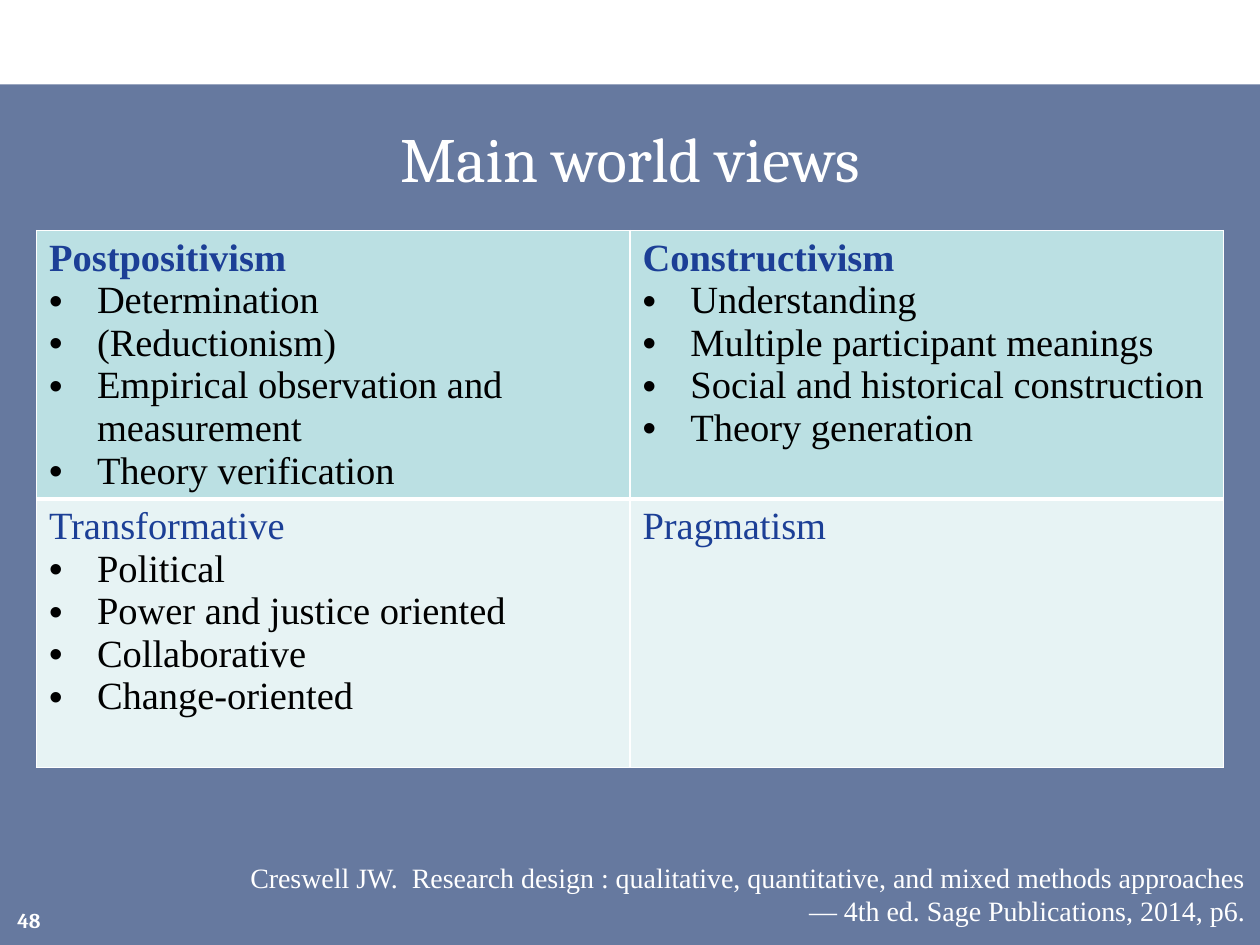
from lxml.etree import SubElement
from pptx import Presentation
from pptx.dml.color import RGBColor
from pptx.enum.shapes import MSO_SHAPE
from pptx.enum.text import MSO_ANCHOR, PP_ALIGN
from pptx.oxml.ns import qn
from pptx.util import Inches, Pt

WORLD_VIEWS = [
    [
        ("Postpositivism", ["Determination", "(Reductionism)",
                            "Empirical observation and measurement", "Theory verification"]),
        ("Constructivism", ["Understanding", "Multiple participant meanings",
                            "Social and historical construction", "Theory generation"]),
    ],
    [
        ("Transformative", ["Political", "Power and justice oriented",
                            "Collaborative", "Change-oriented"]),
        ("Pragmatism", []),
    ],
]
ROW_FILLS = ["BBE0E3", "E7F3F4"]
CITATION = ("Creswell JW.  Research design : qualitative, quantitative, and mixed "
            "methods approaches— 4th ed. Sage Publications, 2014, p6.")


def color(value):
    return RGBColor.from_string(value)


def write(paragraph, text, size=22, font="Times New Roman", fill="FFFFFF",
          bold=False, align=None, bullet=False):
    if bullet:
        properties = paragraph._p.get_or_add_pPr()
        properties.set("marL", str(Inches(0.38)))
        properties.set("indent", str(-Inches(0.38)))
        SubElement(properties, qn("a:buFont"), typeface="Arial")
        SubElement(properties, qn("a:buChar"), char="•")
    if align is not None:
        paragraph.alignment = align
    run = paragraph.add_run()
    run.text = text
    run.font.size = Pt(size)
    run.font.name = font
    run.font.bold = bold
    run.font.color.rgb = color(fill)


class WorldViewSlide:
    heading_color = "1C3F96"
    body_color = "000000"
    border_color = "FFFFFF"

    def __init__(self, slide):
        self.slide = slide

    def backdrop(self, left, top, width, height, fill, opacity):
        panel = self.slide.shapes.add_shape(
            MSO_SHAPE.RECTANGLE, Inches(left), Inches(top), Inches(width), Inches(height))
        panel.shadow.inherit = False
        panel.fill.solid()
        panel.fill.fore_color.rgb = color(fill)
        panel.line.fill.background()
        tint = panel._element.spPr.find(qn("a:solidFill"))[0]
        SubElement(tint, qn("a:alpha"), val=str(opacity * 1000))

    def title(self, text, left, top, width, height):
        heading = self.slide.shapes.title
        self.slide.shapes._spTree.append(heading._element)
        heading.left, heading.top = Inches(left), Inches(top)
        heading.width, heading.height = Inches(width), Inches(height)
        heading.text_frame.vertical_anchor = MSO_ANCHOR.MIDDLE
        write(heading.text_frame.paragraphs[0], text, size=36, font="Cambria",
              align=PP_ALIGN.CENTER)

    def text(self, text, left, top, width, height, anchor=MSO_ANCHOR.TOP, **style):
        frame = self.slide.shapes.add_textbox(
            Inches(left), Inches(top), Inches(width), Inches(height)).text_frame
        frame.word_wrap = True
        frame.vertical_anchor = anchor
        write(frame.paragraphs[0], text, **style)

    def border(self, cell, side, width):
        line = SubElement(cell._tc.get_or_add_tcPr(), qn(f"a:ln{side}"), w=str(Pt(width)))
        paint = SubElement(line, qn("a:solidFill"))
        SubElement(paint, qn("a:srgbClr"), val=self.border_color)

    def cell(self, cell, view, fill, bold, widths):
        for side, width in widths.items():
            self.border(cell, side, width)
        cell.fill.solid()
        cell.fill.fore_color.rgb = color(fill)
        heading, points = view
        frame = cell.text_frame
        write(frame.paragraphs[0], heading, fill=self.heading_color, bold=bold)
        for point in points:
            write(frame.add_paragraph(), point, fill=self.body_color, bullet=True)

    def table(self, views, left, top, width, row_height):
        grid = self.slide.shapes.add_table(
            len(views), len(views[0]), Inches(left), Inches(top),
            Inches(width), Inches(row_height * len(views))).table
        for row, (row_views, fill) in enumerate(zip(views, ROW_FILLS)):
            first = row == 0
            widths = {"L": 1, "R": 1, "T": 1 if first else 3, "B": 3 if first else 1}
            for column, view in enumerate(row_views):
                self.cell(grid.cell(row, column), view, fill, first, widths)


def main():
    deck = Presentation()
    deck.slide_width, deck.slide_height = Inches(10), Inches(7.5)
    page = WorldViewSlide(deck.slides.add_slide(deck.slide_layouts[5]))
    page.backdrop(0, 0.67, 10, 6.83, fill="002060", opacity=60)
    page.title("Main world views", 0.25, 0.83, 9.5, 0.83)
    page.table(WORLD_VIEWS, 0.29, 1.83, 9.42, row_height=2.13)
    page.text(CITATION, 1.73, 6.78, 8.25, 0.64, size=16, align=PP_ALIGN.RIGHT)
    page.text("48", 0, 7.1, 0.42, 0.4, anchor=MSO_ANCHOR.MIDDLE, size=12,
              font="Cambria", bold=True, align=PP_ALIGN.RIGHT)
    deck.save("out.pptx")


if __name__ == "__main__":
    main()
